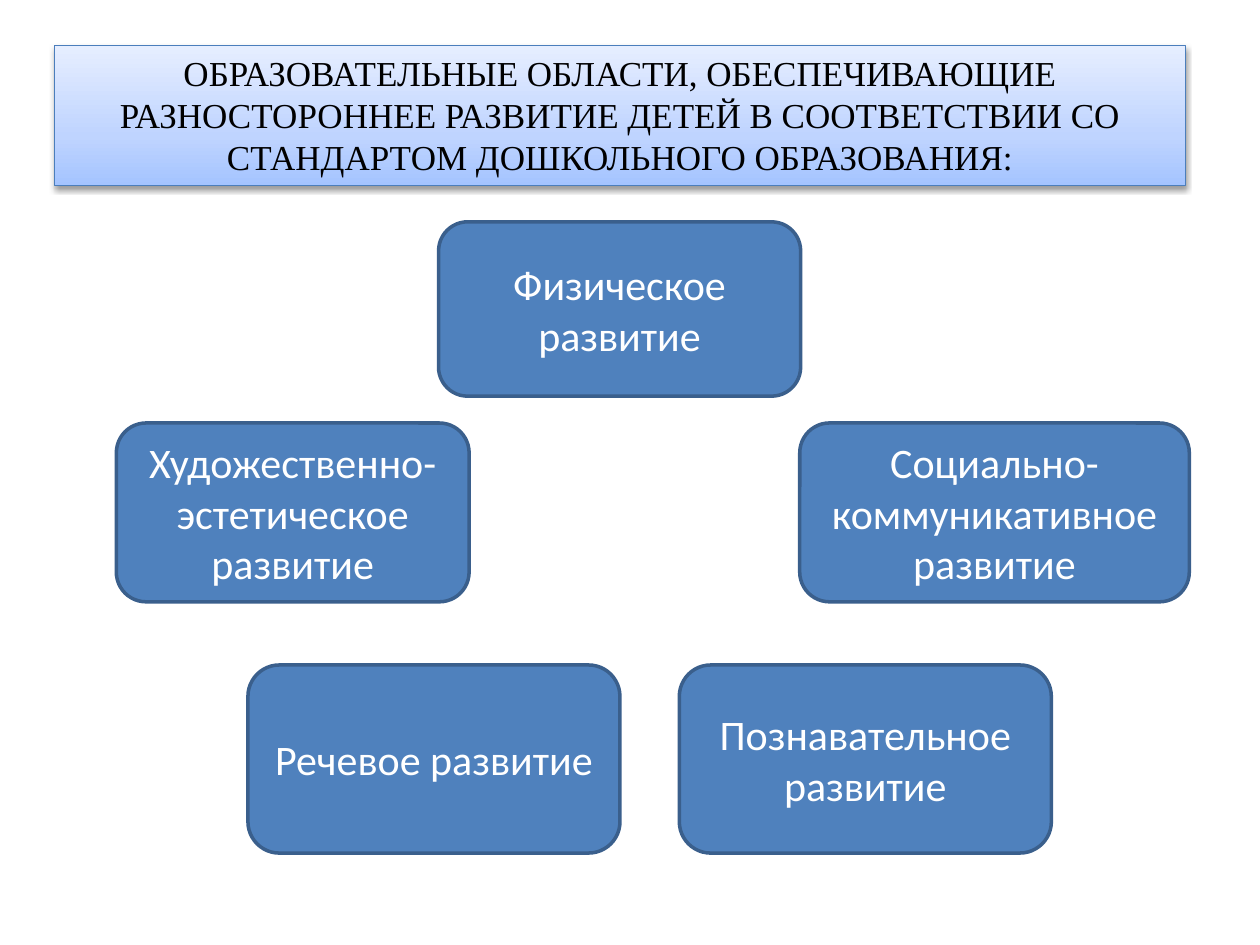
import dataclasses

import pptx
import pptx.dml.color
import pptx.enum.shapes
import pptx.enum.text
import pptx.oxml
import pptx.oxml.ns
import pptx.slide
import pptx.text.text
import pptx.util

Pt = pptx.util.Pt


@dataclasses.dataclass(frozen=True)
class Theme:
    heading_font: str = "Times New Roman"
    area_font: str = "Calibri"
    heading_size: float = 20
    area_size: float = 24
    heading_text: str = "000000"
    heading_line: str = "4B7EBC"
    heading_stops: tuple = ((0, "A4C4FF"), (35, "BFD4FF"), (100, "E6EEFF"))
    area_text: str = "FFFFFF"
    area_fill: str = "4F81BD"
    area_line: str = "3A5F8C"


@dataclasses.dataclass(frozen=True)
class Area:
    name: str
    left: float
    top: float
    width: float
    height: float


THEME = Theme()
HEADING = (
    "ОБРАЗОВАТЕЛЬНЫЕ ОБЛАСТИ, ОБЕСПЕЧИВАЮЩИЕ РАЗНОСТОРОННЕЕ РАЗВИТИЕ ДЕТЕЙ "
    "В СООТВЕТСТВИИ СО СТАНДАРТОМ ДОШКОЛЬНОГО ОБРАЗОВАНИЯ:"
)
MIDDLE_ROW = {"top": 241.7, "height": 102.2}
BOTTOM_ROW = {"top": 380, "width": 212.6, "height": 107.5}
AREAS = (
    Area("Физическое развитие", 250.6, 126.8, 206.9, 99.6),
    Area("Социально-коммуникативное развитие", 457, width=222.6, **MIDDLE_ROW),
    Area("Художественно-эстетическое развитие", 66.5, width=201.6, **MIDDLE_ROW),
    Area("Речевое развитие", 141.7, **BOTTOM_ROW),
    Area("Познавательное развитие", 388.2, **BOTTOM_ROW),
)


def rgb(value: str) -> pptx.dml.color.RGBColor:
    return pptx.dml.color.RGBColor.from_string(value)


def write(frame: pptx.text.text.TextFrame, text: str, font: str, size: float, color: str) -> None:
    frame.text = text
    frame.word_wrap = True
    frame.margin_left = frame.margin_right = Pt(7.2)
    frame.margin_top = frame.margin_bottom = Pt(3.6)
    paragraph = frame.paragraphs[0]
    paragraph.alignment = pptx.enum.text.PP_ALIGN.CENTER
    paragraph.font.name = font
    paragraph.font.size = Pt(size)
    paragraph.font.color.rgb = rgb(color)


def draw_heading(slide: pptx.slide.Slide) -> None:
    heading = slide.shapes.title
    heading.left, heading.top = Pt(31), Pt(25.9)
    heading.width, heading.height = Pt(646.6), Pt(80)
    heading.fill.gradient()
    heading.fill.gradient_angle = 90
    heading.line.color.rgb = rgb(THEME.heading_line)
    heading.line.width = Pt(0.75)

    namespace = pptx.oxml.ns.nsdecls("a")
    properties = heading._element.spPr
    stops = "".join(
        f'<a:gs pos="{position * 1000}"><a:srgbClr val="{color}"/></a:gs>'
        for position, color in THEME.heading_stops
    )
    gradient = properties.find(pptx.oxml.ns.qn("a:gradFill"))
    gradient.replace(
        gradient.find(pptx.oxml.ns.qn("a:gsLst")),
        pptx.oxml.parse_xml(f"<a:gsLst {namespace}>{stops}</a:gsLst>"),
    )
    properties.append(pptx.oxml.parse_xml(
        f'<a:effectLst {namespace}><a:outerShdw blurRad="{Pt(3.1)}" dist="{Pt(1.6)}" '
        'dir="5400000" rotWithShape="0"><a:srgbClr val="000000"><a:alpha val="38000"/>'
        "</a:srgbClr></a:outerShdw></a:effectLst>"
    ))

    frame = heading.text_frame
    write(frame, HEADING, THEME.heading_font, THEME.heading_size, THEME.heading_text)
    frame.vertical_anchor = pptx.enum.text.MSO_ANCHOR.TOP
    frame.auto_size = pptx.enum.text.MSO_AUTO_SIZE.SHAPE_TO_FIT_TEXT


def draw_area(slide: pptx.slide.Slide, area: Area) -> None:
    box = slide.shapes.add_shape(
        pptx.enum.shapes.MSO_SHAPE.ROUNDED_RECTANGLE,
        Pt(area.left), Pt(area.top), Pt(area.width), Pt(area.height),
    )
    box.shadow.inherit = False
    box.fill.solid()
    box.fill.fore_color.rgb = rgb(THEME.area_fill)
    box.line.color.rgb = rgb(THEME.area_line)
    box.line.width = Pt(2)
    write(box.text_frame, area.name, THEME.area_font, THEME.area_size, THEME.area_text)
    box.text_frame.vertical_anchor = pptx.enum.text.MSO_ANCHOR.MIDDLE


def main() -> None:
    presentation = pptx.Presentation()
    presentation.slide_width, presentation.slide_height = Pt(720), Pt(540)
    slide = presentation.slides.add_slide(presentation.slide_layouts.get_by_name("Title Only"))
    draw_heading(slide)
    for area in AREAS:
        draw_area(slide, area)
    presentation.save("out.pptx")


if __name__ == "__main__":
    main()
